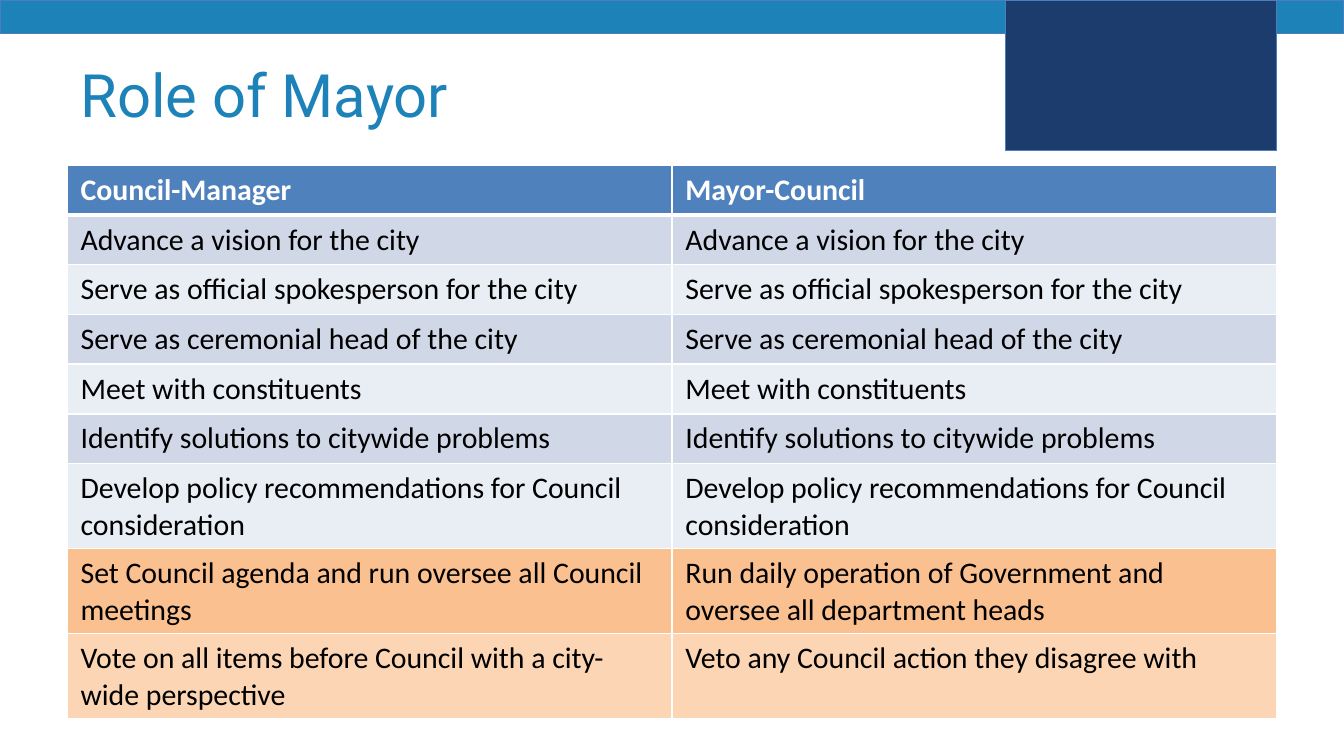
from dataclasses import dataclass

from lxml import etree
from pptx import Presentation
from pptx.dml.color import RGBColor
from pptx.enum.shapes import MSO_SHAPE
from pptx.enum.text import MSO_ANCHOR
from pptx.oxml.ns import qn
from pptx.util import Inches, Pt

RECT = MSO_SHAPE.RECTANGLE
MIDDLE = MSO_ANCHOR.MIDDLE

TITLE = "Role of Mayor"
HEADERS = ("Council-Manager", "Mayor-Council")
SHARED = (
    "Advance a vision for the city",
    "Serve as official spokesperson for the city",
    "Serve as ceremonial head of the city",
    "Meet with constituents",
    "Identify solutions to citywide problems",
    "Develop policy recommendations for Council consideration",
)
DISTINCT = (
    ("Set Council agenda and run oversee all Council meetings",
     "Run daily operation of Government and oversee all department heads"),
    ("Vote on all items before Council with a city-wide perspective",
     "Veto any Council action they disagree with"),
)


@dataclass(frozen=True)
class Theme:
    accent: str = "1C82B8"
    navy: str = "1C3C6D"
    outline: str = "4B7EBC"
    header: str = "4F81BD"
    white: str = "FFFFFF"
    black: str = "000000"
    shared: tuple = ("D0D8E8", "E9EDF4")
    distinct: tuple = ("FAC090", "FCD5B5")
    title_font: str = "Roboto"
    body_font: str = "Calibri"
    title_size: int = 32
    body_size: int = 16
    outline_width: float = 0.75
    rule: int = 1
    header_rule: int = 3


T = Theme()
W = 10
H = W * 9 / 16
MARGIN = W * 0.05
CONTENT_W = W - 2 * MARGIN
TABLE_TOP = 1.23
ONE_LINE, TWO_LINES = 0.37, 0.63
TWO_LINE_ROWS = 3


def style(p, font, size, color, bold=False):
    for r in p.runs:
        r.font.name = font
        r.font.size = Pt(size)
        r.font.bold = bold
        r.font.color.rgb = RGBColor.from_string(color)


def add_block(s, x, y, w, h, color):
    sp = s.shapes.add_shape(RECT, *map(Inches, (x, y, w, h)))
    sp.shadow.inherit = False
    sp.fill.solid()
    sp.fill.fore_color.rgb = RGBColor.from_string(color)
    sp.line.color.rgb = RGBColor.from_string(T.outline)
    sp.line.width = Pt(T.outline_width)


def add_title(s):
    sp = s.shapes.add_textbox(*map(Inches, (MARGIN, 0.23, CONTENT_W, 0.94)))
    tf = sp.text_frame
    tf.word_wrap = True
    tf.vertical_anchor = MIDDLE
    tf.text = TITLE
    style(tf.paragraphs[0], T.title_font, T.title_size, T.accent)


def set_borders(cell, widths):
    tc_pr = cell._tc.get_or_add_tcPr()
    for i, (side, width) in enumerate(widths.items()):
        ln = etree.Element(qn(f"a:ln{side}"), w=str(Pt(width)))
        fill = etree.SubElement(ln, qn("a:solidFill"))
        etree.SubElement(fill, qn("a:srgbClr"), val=T.white)
        tc_pr.insert(i, ln)


def add_comparison(s):
    rows = [(HEADERS, T.header)]
    rows += [((text, text), T.shared[i % 2]) for i, text in enumerate(SHARED)]
    rows += zip(DISTINCT, T.distinct)
    heights = [ONE_LINE] * (len(rows) - TWO_LINE_ROWS) + [TWO_LINES] * TWO_LINE_ROWS
    frame = s.shapes.add_table(
        len(rows), len(HEADERS),
        *map(Inches, (MARGIN, TABLE_TOP, CONTENT_W, sum(heights))))
    table = frame.table
    for col in table.columns:
        col.width = Inches(CONTENT_W / len(HEADERS))
    for i, (texts, color) in enumerate(rows):
        table.rows[i].height = Inches(heights[i])
        is_header = i == 0
        rules = {
            "L": T.rule,
            "R": T.rule,
            "T": T.header_rule if i == 1 else T.rule,
            "B": T.header_rule if is_header else T.rule,
        }
        for cell, text in zip(table.rows[i].cells, texts):
            cell.text_frame.text = text
            style(cell.text_frame.paragraphs[0], T.body_font, T.body_size,
                  T.white if is_header else T.black, is_header)
            cell.fill.solid()
            cell.fill.fore_color.rgb = RGBColor.from_string(color)
            set_borders(cell, rules)


def main():
    prs = Presentation()
    prs.slide_width, prs.slide_height = Inches(W), Inches(H)
    s = prs.slides.add_slide(prs.slide_layouts[6])
    add_block(s, 0, 0, W, 0.25, T.accent)
    add_block(s, 7.48, 0, 2.02, 1.12, T.navy)
    add_title(s)
    add_comparison(s)
    prs.save("out.pptx")


if __name__ == "__main__":
    main()
